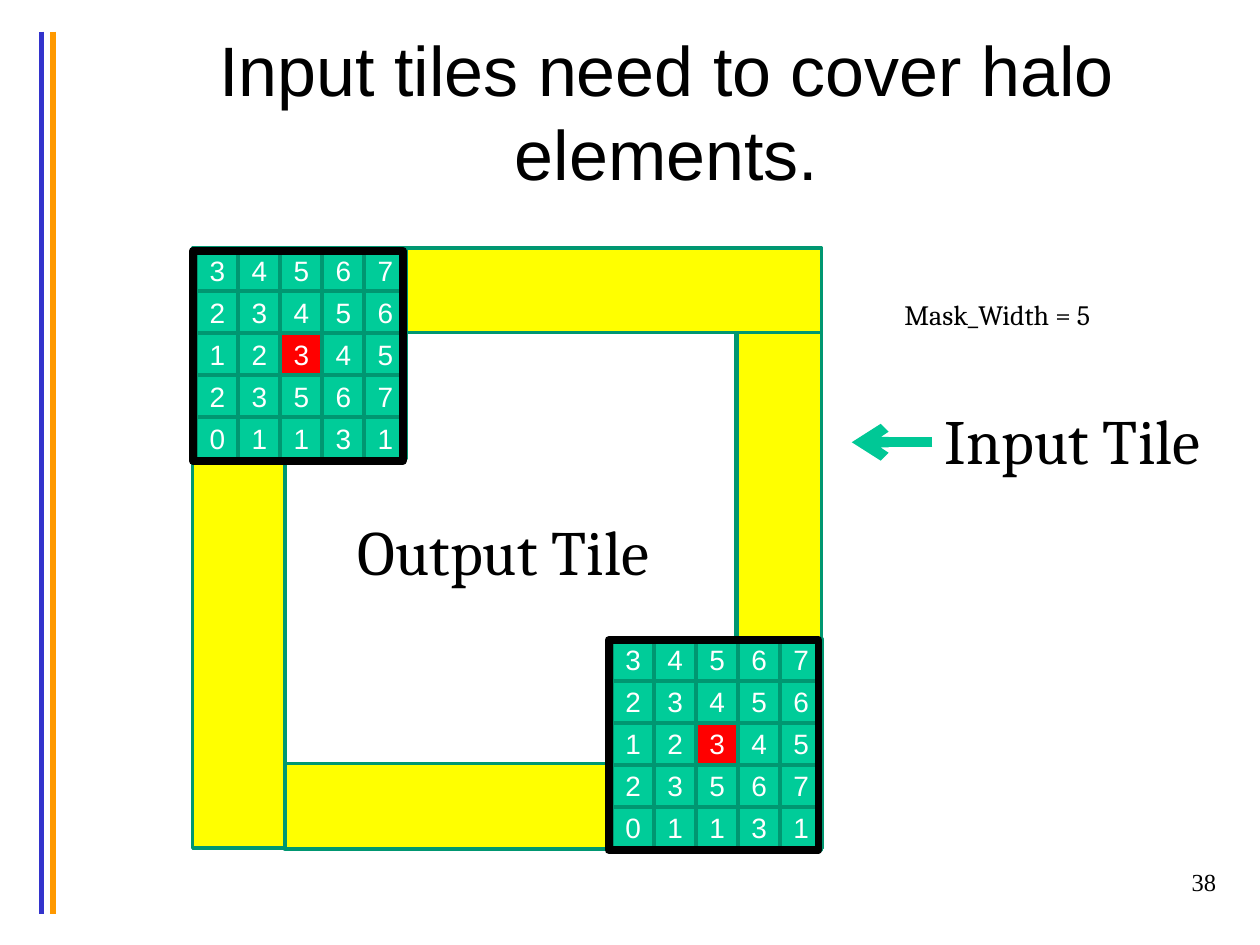
from lxml import etree
from pptx import Presentation
from pptx.dml.color import RGBColor
from pptx.enum.shapes import MSO_CONNECTOR, MSO_SHAPE
from pptx.enum.text import MSO_ANCHOR, MSO_AUTO_SIZE, PP_ALIGN
from pptx.oxml.ns import qn
from pptx.util import Inches, Pt

RECT = MSO_SHAPE.RECTANGLE
STRAIGHT = MSO_CONNECTOR.STRAIGHT
LEFT, CENTER, RIGHT = PP_ALIGN.LEFT, PP_ALIGN.CENTER, PP_ALIGN.RIGHT
TOP, MIDDLE = MSO_ANCHOR.TOP, MSO_ANCHOR.MIDDLE
NO_FIT, GROW = MSO_AUTO_SIZE.NONE, MSO_AUTO_SIZE.SHAPE_TO_FIT_TEXT

YELLOW, GREEN, DARK_GREEN, RED = "FFFF00", "00CC99", "009771", "FF0000"
BLACK, WHITE = "000000", "FFFFFF"

CELL = 0.33
PITCH = 1 / 3
VALUES = ["34567", "23456", "12345", "23567", "01131"]
MASK_CENTER = (2, 2)


def rgb(color):
    return RGBColor.from_string(color)


def place(shape, x, y, w, h):
    shape.left, shape.top = Inches(x), Inches(y)
    shape.width, shape.height = Inches(w), Inches(h)


def write(shape, text, font="Cambria", size=16, color=BLACK, align=LEFT,
          anchor=TOP, wrap=True, fit=NO_FIT):
    tf = shape.text_frame
    tf.auto_size = fit
    tf.word_wrap = wrap
    tf.vertical_anchor = anchor
    p = tf.paragraphs[0]
    p.alignment = align
    r = p.add_run()
    r.text = text
    r.font.name = font
    r.font.size = Pt(size)
    r.font.color.rgb = rgb(color)


def add_label(s, text, x, y, w, h, **fmt):
    write(s.shapes.add_textbox(Inches(x), Inches(y), Inches(w), Inches(h)),
          text, **fmt)


def add_rect(s, x, y, w, h, fill=None, line=DARK_GREEN, weight=2):
    sp = s.shapes.add_shape(RECT, Inches(x), Inches(y), Inches(w), Inches(h))
    sp.shadow.inherit = False
    if fill:
        sp.fill.solid()
        sp.fill.fore_color.rgb = rgb(fill)
    else:
        sp.fill.background()
    sp.line.color.rgb = rgb(line)
    sp.line.width = Pt(weight)
    return sp


def add_line(s, x1, y1, x2, y2, color, weight, arrow=False):
    line = s.shapes.add_connector(STRAIGHT, Inches(x1), Inches(y1),
                                  Inches(x2), Inches(y2))
    line.line.color.rgb = rgb(color)
    line.line.width = Pt(weight)
    if arrow:
        etree.SubElement(line.line._get_or_add_ln(), qn("a:tailEnd"),
                         type="arrow")
    etree.SubElement(line._element.spPr, qn("a:effectLst"))


def add_mask(s, x, y):
    """Draw the 5 x 5 mask window with its centre element in red."""
    for row, digits in enumerate(VALUES):
        for col, digit in enumerate(digits):
            fill = RED if (row, col) == MASK_CENTER else GREEN
            sp = add_rect(s, x + col * PITCH, y + row * PITCH, CELL, CELL, fill)
            tf = sp.text_frame
            tf.margin_left = tf.margin_right = 0
            tf.margin_top = tf.margin_bottom = 0
            write(sp, digit, font="Arial", color=WHITE, align=CENTER,
                  anchor=MIDDLE)
    side = len(VALUES) * PITCH
    add_rect(s, x - 0.03, y + 0.01, side, side, line=BLACK, weight=4.5)


def add_tile(s):
    """Draw the output tile and the halo bands around it."""
    add_rect(s, 1.53, 1.97, 4.99, 0.67, YELLOW)
    add_rect(s, 2.26, 2.64, 3.58, 3.42)
    add_rect(s, 2.26, 6.06, 3.58, 0.68, YELLOW)
    add_rect(s, 1.53, 1.97, 0.73, 4.76, YELLOW)
    add_rect(s, 5.85, 2.64, 0.67, 4.11, YELLOW)


def main():
    prs = Presentation()
    prs.slide_width, prs.slide_height = Inches(10), Inches(7.5)
    s = prs.slides.add_slide(prs.slide_layouts[5])

    title = s.shapes.title
    place(title, 0.75, 0.25, 9.08, 1.25)
    write(title, "Input tiles need to cover halo elements.", font="Arial",
          size=40, align=CENTER, anchor=MIDDLE)

    add_line(s, 0.33, 0.25, 0.33, 7.25, "3333CC", 3)
    add_line(s, 0.42, 0.25, 0.42, 7.25, "FF9900", 3)
    add_tile(s)
    add_label(s, "38", 7.67, 6.83, 2.08, 0.5, font="Times New Roman",
              size=14, align=RIGHT)
    add_mask(s, 1.56, 1.98)
    add_mask(s, 4.86, 5.07)
    add_label(s, "Output Tile", 2.74, 4.02, 2.79, 0.71, size=36, wrap=False,
              fit=GROW)
    add_label(s, "Input Tile", 7.4, 3.14, 2.39, 0.71, size=36, wrap=False,
              fit=GROW)
    add_line(s, 7.4, 3.51, 6.76, 3.51, "00C896", 6, arrow=True)
    add_label(s, "Mask_Width = 5", 7.08, 2.31, 1.72, 0.37, wrap=False,
              fit=GROW)

    prs.save("out.pptx")


if __name__ == "__main__":
    main()
